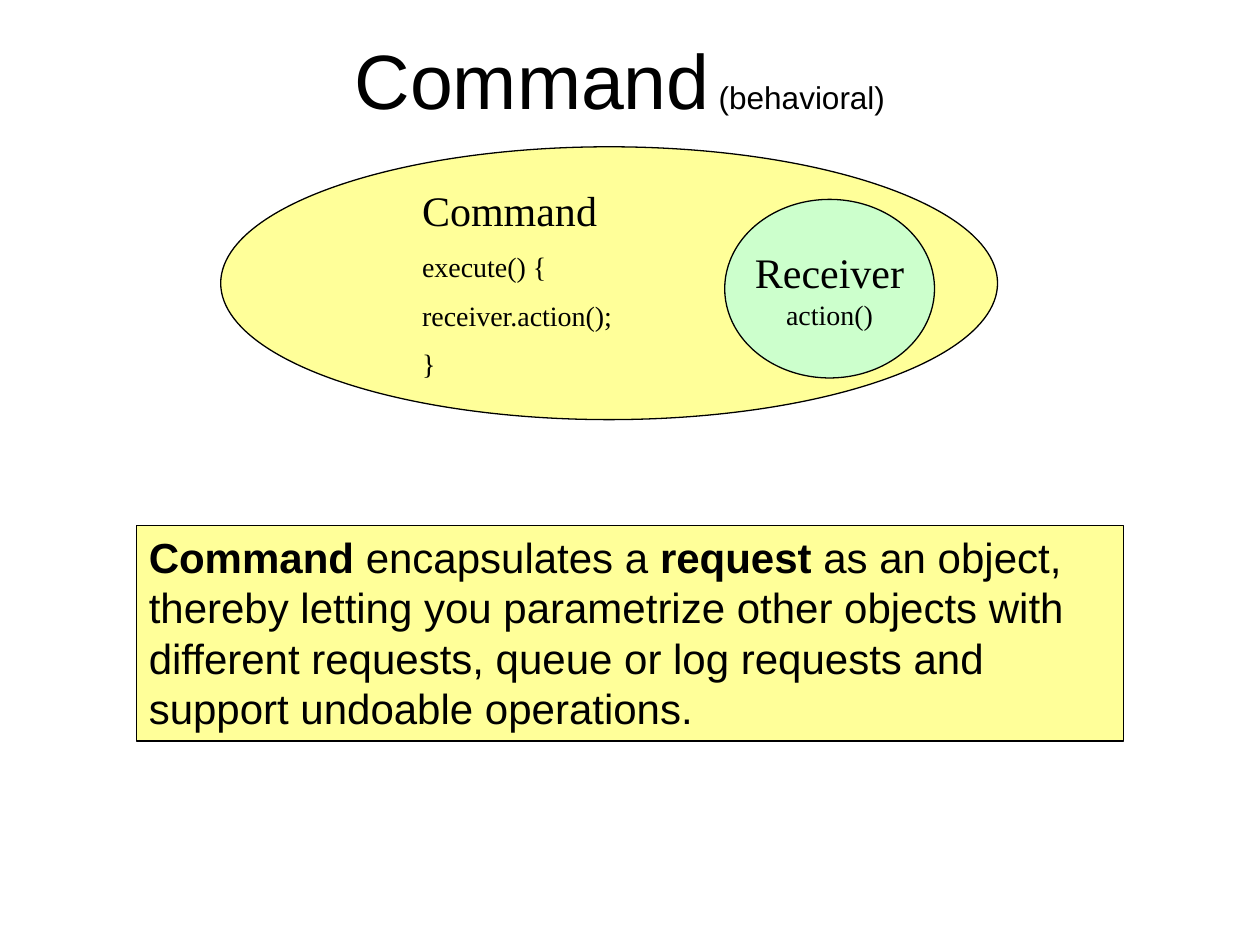
from dataclasses import dataclass

from pptx import Presentation
from pptx.dml.color import RGBColor
from pptx.enum.shapes import MSO_SHAPE
from pptx.enum.text import MSO_ANCHOR, PP_ALIGN
from pptx.util import Cm, Pt

RECT, OVAL = MSO_SHAPE.RECTANGLE, MSO_SHAPE.OVAL
TOP, MIDDLE = MSO_ANCHOR.TOP, MSO_ANCHOR.MIDDLE
LEFT, CENTER = PP_ALIGN.LEFT, PP_ALIGN.CENTER
SANS, SERIF = "Arial", "Times New Roman"
BLACK, YELLOW, GREEN = "000000", "FFFF99", "CCFFCC"


@dataclass
class Run:
    text: str
    size: float | None = None
    bold: bool | None = None


@dataclass
class Line:
    runs: list[Run]
    size: float
    space_before: float = 0


@dataclass
class Box:
    """Place in centimetres."""
    left: float
    top: float
    width: float
    height: float


def rgb(code: str) -> RGBColor:
    return RGBColor.from_string(code)


def add_outlined(shapes, kind, box: Box, fill: str):
    shape = shapes.add_shape(kind, Cm(box.left), Cm(box.top), Cm(box.width), Cm(box.height))
    shape.shadow.inherit = False
    shape.fill.solid()
    shape.fill.fore_color.rgb = rgb(fill)
    shape.line.color.rgb = rgb(BLACK)
    shape.line.width = Pt(0.75)
    return shape


def add_text_box(shapes, box: Box):
    return shapes.add_textbox(Cm(box.left), Cm(box.top), Cm(box.width), Cm(box.height))


def write(shape, lines: list[Line], font: str, align=LEFT, anchor=TOP, wrap: bool = True) -> None:
    frame = shape.text_frame
    frame.word_wrap = wrap
    frame.vertical_anchor = anchor
    for index, line in enumerate(lines):
        paragraph = frame.paragraphs[0] if index == 0 else frame.add_paragraph()
        paragraph.alignment = align
        paragraph.space_before = Pt(line.space_before)
        paragraph.font.name = font
        paragraph.font.size = Pt(line.size)
        paragraph.font.color.rgb = rgb(BLACK)
        for part in line.runs:
            run = paragraph.add_run()
            run.text = part.text
            if part.size:
                run.font.size = Pt(part.size)
            if part.bold:
                run.font.bold = True


def main() -> None:
    deck = Presentation()
    deck.slide_width, deck.slide_height = Cm(25.4), Cm(19.05)
    slide = deck.slides.add_slide(deck.slide_layouts[6])

    title = add_text_box(slide.shapes, Box(1.7, 0, 21.59, 3.18))
    write(title, [Line([Run("Command"), Run(" (behavioral)", size=18)], 44)],
          SANS, CENTER, MIDDLE)

    definition = add_outlined(slide.shapes, RECT, Box(2.75, 10.59, 19.9, 4.35), YELLOW)
    write(definition, [Line([
        Run("Command ", bold=True),
        Run("encapsulates a "),
        Run("request", bold=True),
        Run(" as an object, thereby letting you parametrize other objects with "
            "different requests, queue or log requests and support undoable operations."),
    ], 24)], SANS)

    diagram = slide.shapes.add_group_shape().shapes
    add_outlined(diagram, OVAL, Box(4.45, 2.96, 15.66, 5.5), YELLOW)

    receiver = add_outlined(diagram, OVAL, Box(14.61, 4.02, 4.23, 3.6), GREEN)
    write(receiver, [Line([Run("Receiver")], 24), Line([Run("action()")], 16)],
          SERIF, CENTER, MIDDLE, wrap=False)

    command = add_text_box(diagram, Box(8.26, 3.6, 5.08, 4.32))
    code = ["execute() {", "receiver.action();", "}"]
    write(command, [Line([Run("Command")], 24, space_before=3),
                    *(Line([Run(text)], 16, space_before=8.5) for text in code)], SERIF)

    deck.save("out.pptx")


if __name__ == "__main__":
    main()
